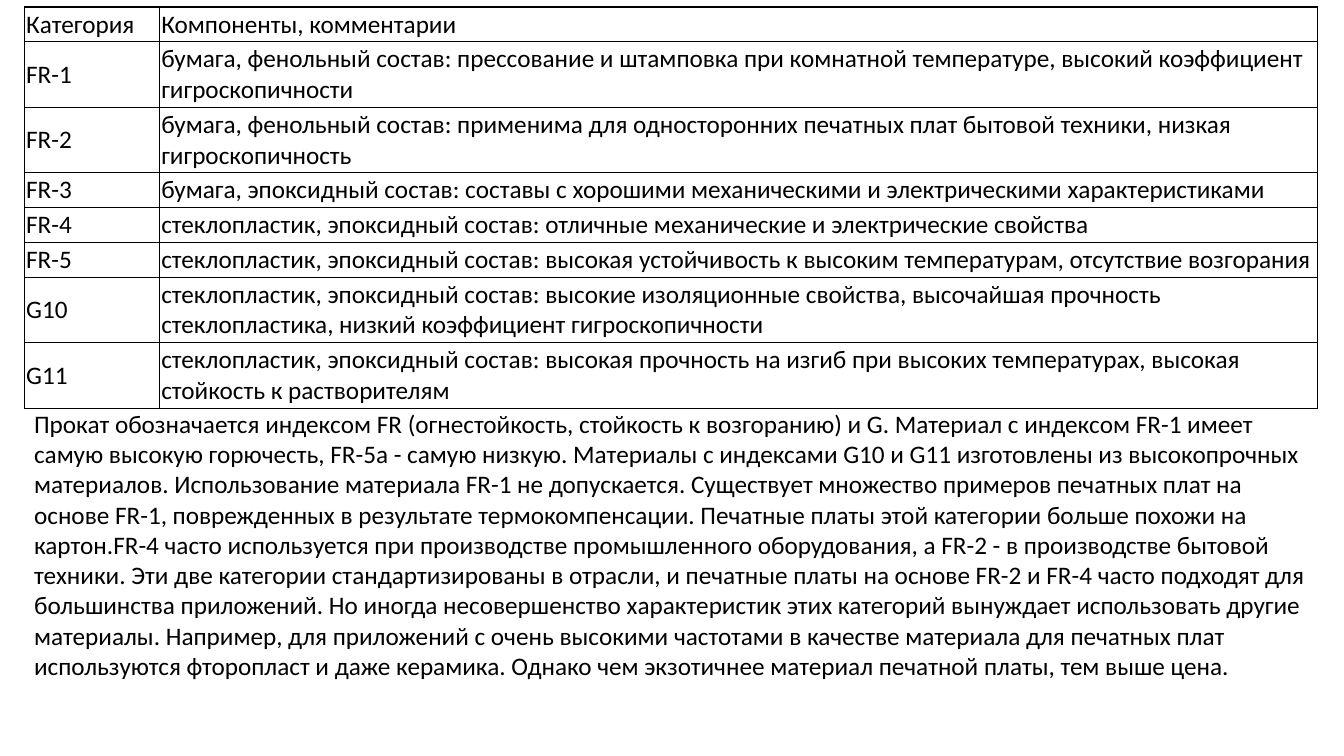
from lxml.etree import SubElement as Sub
from pptx import Presentation
from pptx.dml.color import RGBColor
from pptx.enum.text import MSO_ANCHOR as Anchor, MSO_AUTO_SIZE as Auto
from pptx.oxml.ns import qn
from pptx.util import Inches, Pt

# Content
ROWS = [
    ("Категория", "Компоненты, комментарии"),
    ("FR-1", "бумага, фенольный состав: прессование и штамповка при комнатной "
             "температуре, высокий коэффициент гигроскопичности"),
    ("FR-2", "бумага, фенольный состав: применима для односторонних печатных плат "
             "бытовой техники, низкая гигроскопичность"),
    ("FR-3", "бумага, эпоксидный состав: составы с хорошими механическими "
             "и электрическими характеристиками"),
    ("FR-4", "стеклопластик, эпоксидный состав: отличные механические "
             "и электрические свойства"),
    ("FR-5", "стеклопластик, эпоксидный состав: высокая устойчивость к высоким "
             "температурам, отсутствие возгорания"),
    ("G10", "стеклопластик, эпоксидный состав: высокие изоляционные свойства, "
            "высочайшая прочность стеклопластика, низкий коэффициент гигроскопичности"),
    ("G11", "стеклопластик, эпоксидный состав: высокая прочность на изгиб при высоких "
            "температурах, высокая стойкость к растворителям"),
]
NOTE = [  # sentences of one paragraph
    "Прокат обозначается индексом FR (огнестойкость, стойкость к возгоранию) и G.",
    "Материал с индексом FR-1 имеет самую высокую горючесть, FR-5a - самую низкую.",
    "Материалы с индексами G10 и G11 изготовлены из высокопрочных материалов.",
    "Использование материала FR-1 не допускается.",
    "Существует множество примеров печатных плат на основе FR-1, "
    "поврежденных в результате термокомпенсации.",
    "Печатные платы этой категории больше похожи на картон.FR-4 часто используется "
    "при производстве промышленного оборудования, а FR-2 - в производстве бытовой "
    "техники.",
    "Эти две категории стандартизированы в отрасли, и печатные платы на "
    "основе FR-2 и FR-4 часто подходят для большинства приложений.",
    "Но иногда несовершенство характеристик этих категорий вынуждает "
    "использовать другие материалы.",
    "Например, для приложений с очень высокими частотами в качестве "
    "материала для печатных плат используются фторопласт и даже керамика.",
    "Однако чем экзотичнее материал печатной платы, тем выше цена.",
]

# Format and grid, in inches
BLACK = RGBColor(0, 0, 0)
FONT = {"name": "Calibri", "size": Pt(18)}
PAD = Inches(0.02)
CELL = {"vertical_anchor": Anchor.MIDDLE, "margin_left": PAD,
        "margin_right": PAD, "margin_top": PAD, "margin_bottom": PAD}
LEFT, TOP, COLS = 0.24, 0.07, (1.34, 11.49)
WIDE = sum(COLS)
ONE, TWO, FULL = 0.34, 0.65, 104  # row heights, letters that fit on one line
NOTE_TOP, NOTE_HIGH = 4, 2.83


def put(item, values):
    for key, value in values.items():
        setattr(item, key, value)


def write(frame, text):
    para = frame.paragraphs[0]
    para.text = text
    font = para.runs[0].font
    put(font, FONT)
    font.color.rgb = BLACK


def frame_cell(cell):
    props = cell._tc.get_or_add_tcPr()
    for side in ("lnL", "lnR", "lnT", "lnB"):
        line = Sub(props, qn("a:" + side), w=str(Pt(1)))
        fill = Sub(line, qn("a:solidFill"))
        Sub(fill, qn("a:srgbClr"), val=str(BLACK))


deck = Presentation()
deck.slide_width, deck.slide_height = Inches(13.33), Inches(7.5)
slide = deck.slides.add_slide(deck.slide_layouts[6])

# Table of board grades
highs = [TWO if len(text) > FULL else ONE for _, text in ROWS]
table = slide.shapes.add_table(
    len(ROWS), len(COLS), Inches(LEFT), Inches(TOP),
    Inches(WIDE), Inches(sum(highs))).table
put(table, {"first_row": False, "horz_banding": False})
for col, width in zip(table.columns, COLS):
    col.width = Inches(width)
for row, high, texts in zip(table.rows, highs, ROWS):
    row.height = Inches(high)
    for cell, text in zip(row.cells, texts):
        put(cell, CELL)
        write(cell.text_frame, text)
        frame_cell(cell)
        cell.fill.background()

# Note under the table
box = slide.shapes.add_textbox(
    Inches(LEFT), Inches(NOTE_TOP), Inches(WIDE), Inches(NOTE_HIGH))
put(box.text_frame, {"word_wrap": True, "auto_size": Auto.SHAPE_TO_FIT_TEXT})
write(box.text_frame, " ".join(NOTE))

deck.save("out.pptx")
